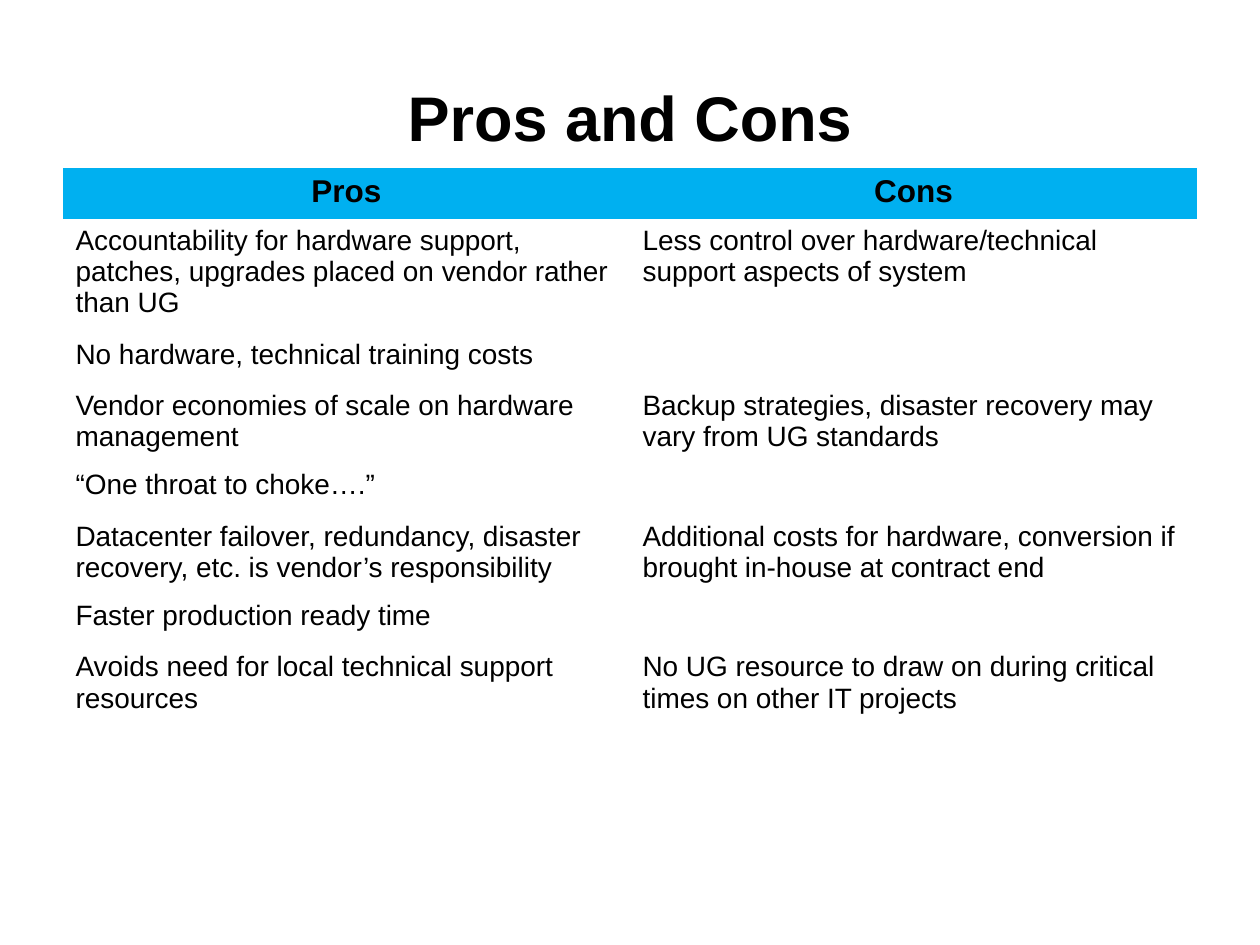
from pptx import Presentation
from pptx.dml.color import RGBColor
from pptx.enum.text import MSO_ANCHOR, PP_ALIGN
from pptx.util import Pt

# Content
TITLE = "Pros and Cons"
HEADINGS = ("Pros", "Cons")
ARGUMENTS = [
    ("Accountability for hardware support, patches, upgrades placed on vendor rather than UG",
     "Less control over hardware/technical support aspects of system"),
    ("No hardware, technical training costs", ""),
    ("Vendor economies of scale on hardware management",
     "Backup strategies, disaster recovery may vary from UG standards"),
    ("“One throat to choke….”", ""),
    ("Datacenter failover, redundancy, disaster recovery, etc. is vendor’s responsibility",
     "Additional costs for hardware, conversion if brought in-house at contract end"),
    ("Faster production ready time", ""),
    ("Avoids need for local technical support resources",
     "No UG resource to draw on during critical times on other IT projects"),
]

# Style and layout
COLORS = {"text": "000000", "header": "00B0F0", "body": "FFFFFF"}
FONT = "Arial"
LEFT, WIDTH = 36, 648
TABLE_TOP, ROW_HEIGHT = 96, 29.2


def style_paragraph(paragraph, size, bold, alignment):
    paragraph.alignment = alignment
    paragraph.font.name = FONT
    paragraph.font.size = Pt(size)
    paragraph.font.bold = bold
    paragraph.font.color.rgb = RGBColor.from_string(COLORS["text"])


presentation = Presentation()
presentation.slide_width, presentation.slide_height = Pt(720), Pt(540)
slide = presentation.slides.add_slide(presentation.slide_layouts[6])

# Title
title_frame = slide.shapes.add_textbox(Pt(LEFT), Pt(21.6), Pt(WIDTH), Pt(90)).text_frame
title_frame.word_wrap = True
title_frame.vertical_anchor = MSO_ANCHOR.MIDDLE
title_frame.text = TITLE
style_paragraph(title_frame.paragraphs[0], 36, True, PP_ALIGN.CENTER)

# Comparison table
rows = [HEADINGS] + ARGUMENTS
table = slide.shapes.add_table(
    len(rows), len(HEADINGS), Pt(LEFT), Pt(TABLE_TOP), Pt(WIDTH), Pt(ROW_HEIGHT * len(rows))
).table
table.horz_banding = False
for row_index, texts in enumerate(rows):
    table.rows[row_index].height = Pt(ROW_HEIGHT)
    is_header = row_index == 0
    for column_index, text in enumerate(texts):
        cell = table.cell(row_index, column_index)
        cell.fill.solid()
        cell.fill.fore_color.rgb = RGBColor.from_string(COLORS["header" if is_header else "body"])
        cell.text = text
        style_paragraph(cell.text_frame.paragraphs[0], 18 if is_header else 16, is_header,
                        PP_ALIGN.CENTER if is_header else PP_ALIGN.LEFT)

# Plain table style without grid lines
style_id = table._tbl.tblPr.find("{http://schemas.openxmlformats.org/drawingml/2006/main}tableStyleId")
style_id.text = "{2D5ABB26-0587-4C30-8999-92F81FD0307C}"

presentation.save("out.pptx")
